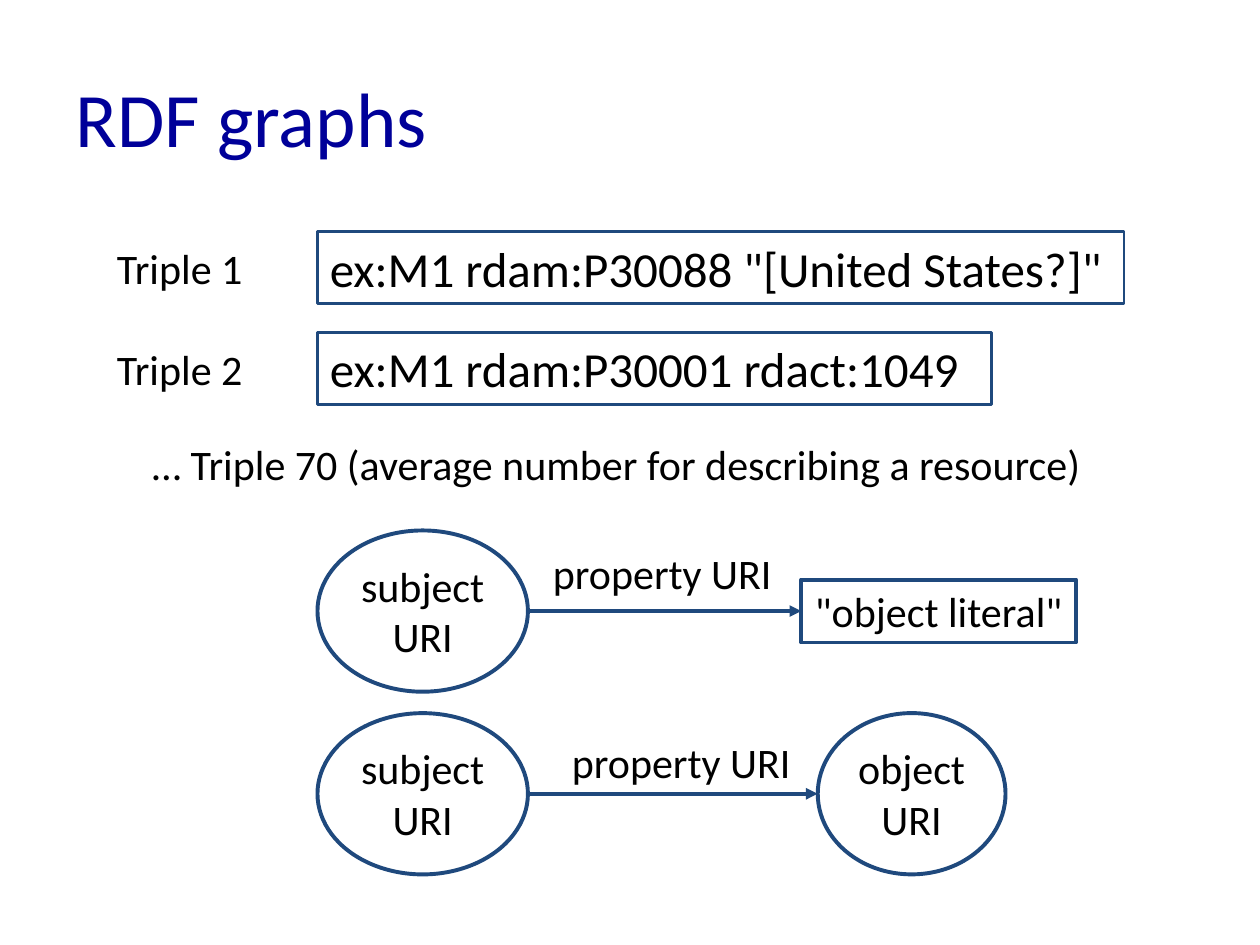
from lxml.etree import SubElement
from pptx import Presentation
from pptx.dml.color import RGBColor
from pptx.enum.shapes import MSO_CONNECTOR, MSO_SHAPE
from pptx.enum.text import MSO_ANCHOR, MSO_AUTO_SIZE, PP_ALIGN
from pptx.oxml.ns import qn
from pptx.util import Inches, Pt

COLORS = {"title": "000099", "text": "000000", "line": "1F497D", "fill": "FFFFFF"}
FONT = "Calibri"
LABEL_HEIGHT = 0.5
STATEMENT_HEIGHT = 0.57
NODE_HEIGHT = 1.28
STATEMENT_LEFT = 2.52


def color(name):
    return RGBColor.from_string(COLORS[name])


def style_font(paragraph, size, color_name="text"):
    paragraph.font.name = FONT
    paragraph.font.size = Pt(size)
    paragraph.font.color.rgb = color(color_name)


def write(shape, lines, size, alignment, anchor):
    frame = shape.text_frame
    frame.text = "\n".join(lines)
    frame.word_wrap = False
    frame.auto_size = MSO_AUTO_SIZE.SHAPE_TO_FIT_TEXT
    frame.vertical_anchor = anchor
    for paragraph in frame.paragraphs:
        paragraph.alignment = alignment
        style_font(paragraph, size)


def add_label(slide, box, text):
    shape = slide.shapes.add_textbox(*map(Inches, box))
    write(shape, [text], 24, PP_ALIGN.LEFT, MSO_ANCHOR.TOP)


def add_outlined(slide, kind, box, lines, size=24, width=2.25,
                 alignment=PP_ALIGN.CENTER, filled=True):
    shape = slide.shapes.add_shape(kind, *map(Inches, box))
    shape.shadow.inherit = False
    if filled:
        shape.fill.solid()
        shape.fill.fore_color.rgb = color("fill")
    else:
        shape.fill.background()
    shape.line.color.rgb = color("line")
    shape.line.width = Pt(width)
    write(shape, lines, size, alignment, MSO_ANCHOR.TOP)


def add_arrow(slide, start, end, y):
    connector = slide.shapes.add_connector(
        MSO_CONNECTOR.CURVE, Inches(start), Inches(y), Inches(end), Inches(y))
    connector.line.color.rgb = color("line")
    connector.line.width = Pt(2.25)
    properties = connector._element.spPr
    SubElement(properties.find(qn("a:ln")), qn("a:tailEnd"), type="triangle")
    SubElement(properties, qn("a:effectLst"))


def add_title(slide, box, text):
    title = slide.shapes.title
    title.left, title.top, title.width, title.height = map(Inches, box)
    title.text_frame.text = text
    title.text_frame.vertical_anchor = MSO_ANCHOR.MIDDLE
    paragraph = title.text_frame.paragraphs[0]
    paragraph.alignment = PP_ALIGN.LEFT
    style_font(paragraph, 44, "title")


def add_triple(slide, left, top, name, statement, width):
    """Place a row with its name on the left and the framed statement."""
    label_top = top + (STATEMENT_HEIGHT - LABEL_HEIGHT) / 2
    add_label(slide, (left, label_top, 1.21, LABEL_HEIGHT), name)
    add_outlined(slide, MSO_SHAPE.RECTANGLE,
                 (STATEMENT_LEFT, top, width, STATEMENT_HEIGHT), [statement],
                 size=28, width=1.5, alignment=PP_ALIGN.LEFT, filled=False)


def add_graph(slide, left, top, kind, lines, object_box, label_offset):
    """Place subject, arrow and object on one axis; offsets are from left, top."""
    subject_width = 1.67
    axis = top + NODE_HEIGHT / 2
    object_offset, object_width, object_height = object_box
    label_left, label_top = label_offset
    add_outlined(slide, MSO_SHAPE.OVAL, (left, top, subject_width, NODE_HEIGHT),
                 ["subject", "URI"])
    add_outlined(slide, kind, (left + object_offset, axis - object_height / 2,
                               object_width, object_height), lines)
    add_arrow(slide, left + subject_width, left + object_offset, axis)
    add_label(slide, (left + label_left, top + label_top, 1.95, LABEL_HEIGHT),
              "property URI")


def main():
    presentation = Presentation()
    presentation.slide_width, presentation.slide_height = Inches(10), Inches(7.5)
    slide = presentation.slides.add_slide(presentation.slide_layouts[5])

    add_title(slide, (0.5, 0.3, 9, 1.25), "RDF graphs")

    # Triples
    triples = [("Triple 1", 'ex:M1 rdam:P30088 "[United States?]"', 6.4),
               ("Triple 2", "ex:M1 rdam:P30001 rdact:1049", 5.35)]
    for row, (name, statement, width) in enumerate(triples):
        add_triple(slide, 0.83, 1.84 + 0.8 * row, name, statement, width)
    add_label(slide, (1.11, 3.43, 7.64, LABEL_HEIGHT),
              "… Triple 70 (average number for describing a resource)")

    # Graphs: one ending in a literal, one in a URI
    graphs = [
        (MSO_SHAPE.RECTANGLE, ['"object literal"'], (3.84, 2.18, 0.5), (1.77, 0.09)),
        (MSO_SHAPE.OVAL, ["object", "URI"], (3.97, 1.49, NODE_HEIGHT), (1.92, 0.14)),
    ]
    for row, graph in enumerate(graphs):
        add_graph(slide, STATEMENT_LEFT, 4.21 + 1.45 * row, *graph)

    presentation.save("out.pptx")


if __name__ == "__main__":
    main()
